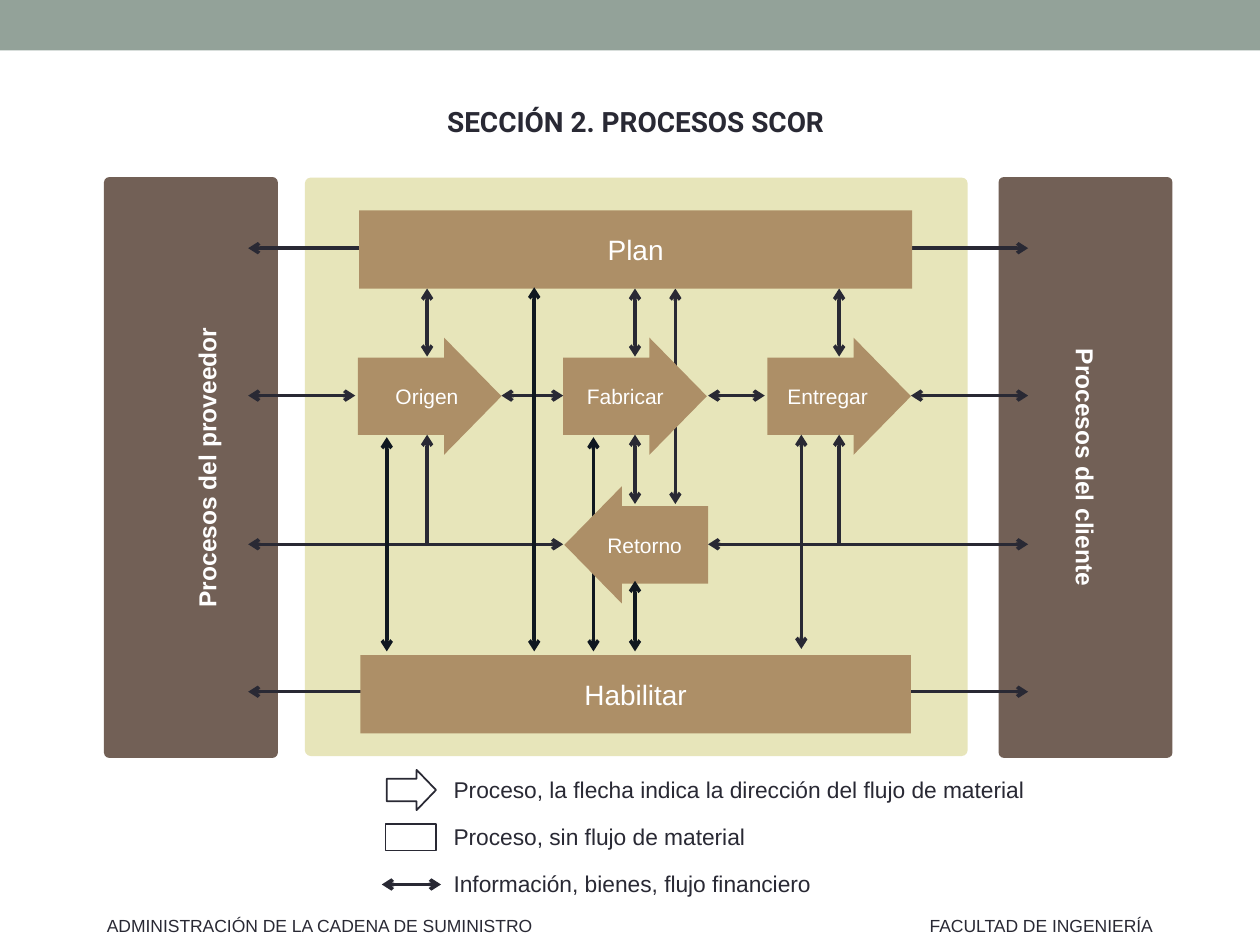
from dataclasses import dataclass
from typing import NamedTuple

from lxml.etree import SubElement
from pptx import Presentation
from pptx.dml.color import RGBColor
from pptx.enum.shapes import MSO_CONNECTOR, MSO_SHAPE
from pptx.enum.text import MSO_ANCHOR, PP_ALIGN
from pptx.oxml.ns import qn
from pptx.util import Inches, Pt


@dataclass(frozen=True)
class Theme:
    band: str = "93A299"
    ink: str = "292934"
    deep: str = "101820"
    side: str = "726056"
    pale: str = "E7E5BA"
    tan: str = "AD8F67"
    white: str = "FFFFFF"
    face: str = "Arial"
    head: str = "Roboto"
    title: int = 16
    panel: int = 14
    key: int = 13
    step: int = 12
    foot: int = 10


T = Theme()


class Area(NamedTuple):
    col: float
    row: float
    cols: float
    rows: float


class Pad(NamedTuple):
    left: float = 0.04
    top: float = 0
    right: float = 0.04
    bottom: float = 0


@dataclass(frozen=True)
class Label:
    text: str
    size: int
    color: str
    face: str = T.face
    bold: bool = False
    align: PP_ALIGN = PP_ALIGN.CENTER
    anchor: MSO_ANCHOR = MSO_ANCHOR.MIDDLE
    pad: Pad = Pad()
    wrap: bool = True
    lead: float = 1.0


@dataclass(frozen=True)
class Block:
    area: Area
    fill: str
    kind: MSO_SHAPE = MSO_SHAPE.RECTANGLE
    label: Label | None = None
    edge: str | None = None
    bends: tuple = ()
    turn: int = 0
    flip: bool = False


class Wire(NamedTuple):
    start: tuple
    end: tuple
    color: str
    ends: tuple = ("headEnd", "tailEnd")


COLS, ROWS = 10, 7.5
deck = Presentation()
deck.slide_width, deck.slide_height = Inches(10), Inches(7.5)
slide = deck.slides.add_slide(deck.slide_layouts[6])


def across(cols: float) -> int:
    return round(deck.slide_width * cols / COLS)


def down(rows: float) -> int:
    return round(deck.slide_height * rows / ROWS)


def place(area: Area) -> tuple:
    return across(area.col), down(area.row), across(area.cols), down(area.rows)


def apply(target, values: dict) -> None:
    for name, value in values.items():
        setattr(target, name, value)


def write(shape, label: Label) -> None:
    frame = shape.text_frame
    apply(frame, {"word_wrap": label.wrap, "vertical_anchor": label.anchor})
    apply(frame, {f"margin_{k}": Inches(v) for k, v in label.pad._asdict().items()})
    para = frame.paragraphs[0]
    apply(para, {"alignment": label.align, "line_spacing": label.lead})
    run = para.add_run()
    run.text = label.text
    apply(run.font, {"name": label.face, "size": Pt(label.size), "bold": label.bold})
    run.font.color.rgb = RGBColor.from_string(label.color)


def note(area: Area, label: Label) -> None:
    write(slide.shapes.add_textbox(*place(area)), label)


def draw(block: Block) -> None:
    shape = slide.shapes.add_shape(block.kind, *place(block.area))
    shape.shadow.inherit = False
    shape.rotation = block.turn
    shape.fill.solid()
    shape.fill.fore_color.rgb = RGBColor.from_string(block.fill)
    for index, bend in enumerate(block.bends):
        shape.adjustments[index] = bend
    if block.edge:
        shape.line.color.rgb = RGBColor.from_string(block.edge)
        shape.line.width = Pt(1)
    else:
        shape.line.fill.background()
    if block.flip:
        shape.element.spPr.xfrm.set("flipH", "1")
    if block.label:
        write(shape, block.label)


def link(wire: Wire) -> None:
    (left, top), (right, low) = wire.start, wire.end
    line = slide.shapes.add_connector(
        MSO_CONNECTOR.STRAIGHT, across(left), down(top), across(right), down(low))
    line.line.color.rgb = RGBColor.from_string(wire.color)
    line.line.width = Pt(2)
    props = line.element.spPr
    for tip in wire.ends:
        SubElement(props.get_or_add_ln(), qn(f"a:{tip}"), type="arrow")
    SubElement(props, qn("a:effectLst"))


def flat(row: float, left: float, right: float) -> Wire:
    return Wire((right, row), (left, row), T.ink)


def tall(col: float, top: float, low: float, color: str = T.ink) -> Wire:
    return Wire((col, top), (col, low), color)


def panel(col: float, turn: int, text: str, top: float) -> Block:
    label = Label(text, T.panel, T.white, bold=True, pad=Pad(top=top))
    return Block(Area(col, 3.02, 4.61, 1.38), T.side, MSO_SHAPE.ROUNDED_RECTANGLE,
                 label, bends=(0.03,), turn=turn)


def bar(area: Area, text: str) -> Block:
    return Block(area, T.tan, label=Label(text, T.title, T.white))


def step(col: float, row: float, text: str, back: bool = False) -> Block:
    align = PP_ALIGN.LEFT if back else PP_ALIGN.RIGHT
    label = Label(text, T.step, T.white, align=align)
    return Block(Area(col, row, 1.14, 0.93), T.tan, MSO_SHAPE.RIGHT_ARROW, label,
                 bends=(0.66, 0.49), flip=back)


PLAN, MAKE, BACK, HELP = 1.97, 3.14, 4.32, 5.49
WEST, EAST = 1.97, 8.16
STEPS = [2.84, 4.47, 6.09]

draw(Block(Area(0, 0, COLS, 0.4), T.band))
note(Area(0.83, 0.65, 8.43, 0.6),
     Label("SECCIÓN 2. PROCESOS SCOR", T.title, T.ink, T.head, True,
           anchor=MSO_ANCHOR.TOP, pad=Pad(0.1, 0.05, 0.1, 0.05), lead=1.5))
for col, cols, text in [(0.75, 3.63, "ADMINISTRACIÓN DE LA CADENA DE SUMINISTRO"),
                        (7.28, 2.02, "FACULTAD DE INGENIERÍA")]:
    note(Area(col, 7.21, cols, 0.27),
         Label(text, T.foot, T.ink, align=PP_ALIGN.LEFT, anchor=MSO_ANCHOR.TOP,
               pad=Pad(0.1, 0.05, 0.1, 0.05), wrap=False))

draw(Block(Area(3.07, 6.11, 0.39, 0.32), T.white, MSO_SHAPE.RIGHT_ARROW,
           edge=T.ink, bends=(0.56, 0.48)))
draw(Block(Area(3.06, 6.54, 0.4, 0.21), T.white, edge=T.ink))
link(flat(7.02, 3.03, 3.5))
for index, (text, cols) in enumerate([
        ("Proceso, la flecha indica la dirección del flujo de material", 4.68),
        ("Proceso, sin flujo de material", 2.43),
        ("Información, bienes, flujo financiero", 2.96)]):
    note(Area(3.56, 6.16 + 0.37 * index, cols, 0.22),
         Label(text, T.key, T.ink, align=PP_ALIGN.LEFT, anchor=MSO_ANCHOR.TOP,
               wrap=False))

draw(panel(6.31, 90, "Procesos del cliente", 0))
draw(panel(-0.79, 270, "Procesos del proveedor", 0.25))
draw(Block(Area(2.42, 1.41, 5.26, 4.59), T.pale, MSO_SHAPE.ROUNDED_RECTANGLE,
           bends=(0.01,)))

for row in (PLAN, HELP):
    link(flat(row, WEST, 4.45))
    link(flat(row, 5.62, EAST))
link(tall(4.71, 3.47, 5.17, T.deep))
link(tall(5.36, 2.29, 4))

draw(bar(Area(2.86, 5.2, 4.37, 0.62), "Habilitar"))
draw(bar(Area(2.85, 1.67, 4.39, 0.62), "Plan"))
for col, text in zip(STEPS, ["Origen", "Fabricar", "Entregar"]):
    draw(step(col, 2.68, text))
draw(step(4.48, 3.86, "Retorno", True))

for left, right in [(WEST, 2.82), (3.98, 4.47), (5.62, 6.07), (7.23, EAST)]:
    link(flat(MAKE, left, right))
for left, right in [(WEST, 4.47), (5.62, EAST)]:
    link(flat(BACK, left, right))
for col in (3.39, 5.04, 6.66):
    link(tall(col, 2.29, 2.83))
for col in (3.39, 6.66):
    link(Wire((col, 3.45), (col, BACK), T.ink, ("headEnd",)))
for col, top in [(3.07, 3.47), (4.24, 2.28), (5.04, 4.61)]:
    link(tall(col, top, 5.17, T.deep))
for col, low in [(5.04, 4), (6.36, 5.15)]:
    link(tall(col, 3.45, low))

deck.save("out.pptx")
